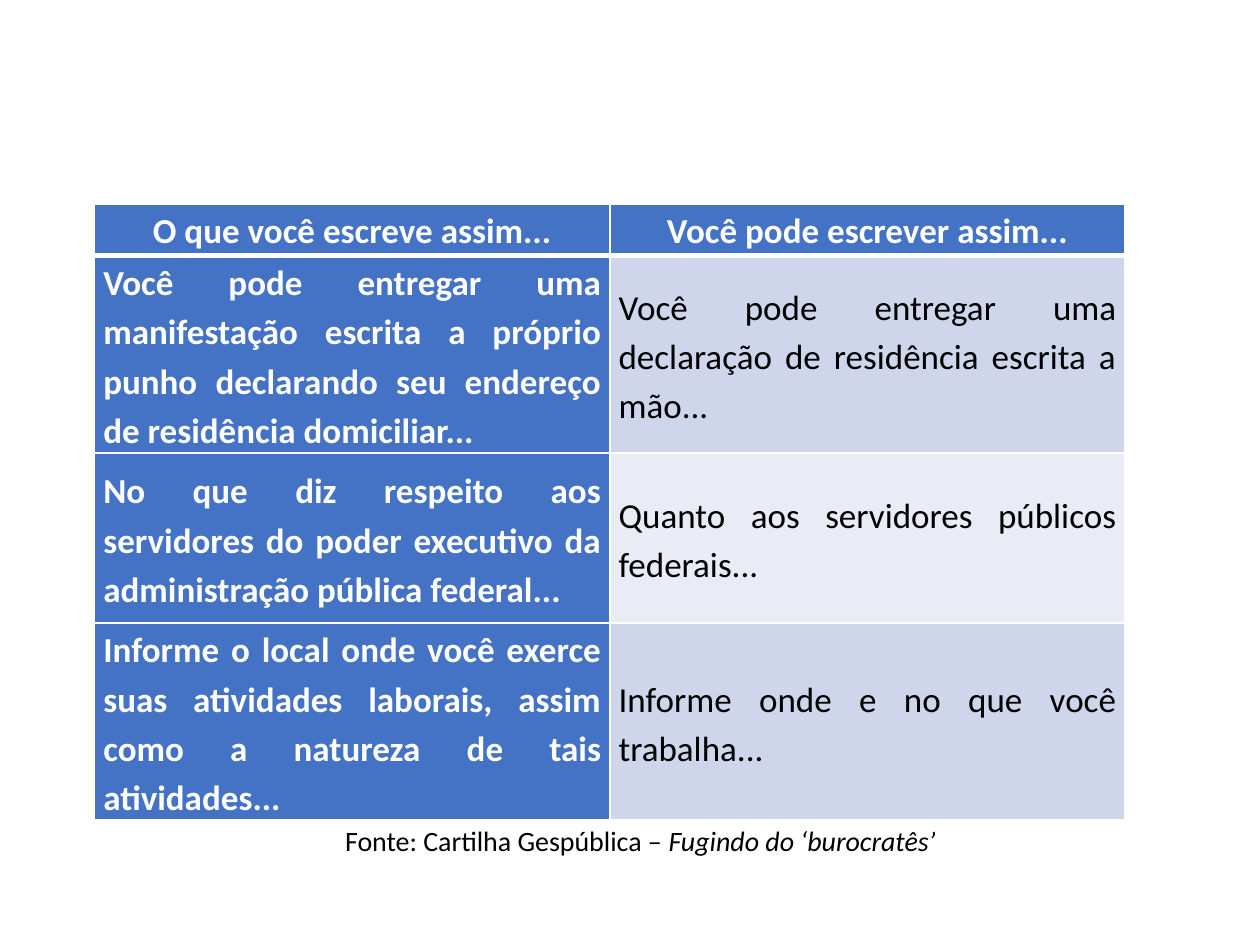
"""Build a slide that sets bureaucratic wording beside plain wording."""
from dataclasses import dataclass

from lxml import etree
from pptx import Presentation
from pptx.dml.color import RGBColor
from pptx.enum.text import MSO_ANCHOR, PP_ALIGN
from pptx.oxml.ns import qn
from pptx.util import Inches, Pt

TOP, MIDDLE = MSO_ANCHOR.TOP, MSO_ANCHOR.MIDDLE
CENTER, JUSTIFY = PP_ALIGN.CENTER, PP_ALIGN.JUSTIFY


@dataclass(frozen=True)
class Theme:
    font: str = "Calibri"
    table_size: int = 20
    source_size: int = 16
    accent: str = "4472C4"
    bands: tuple = ("CFD5EA", "E9EBF5")
    light: str = "FFFFFF"
    dark: str = "000000"
    border: int = 1
    header_border: int = 3


class SlideBuilder:
    def __init__(self, slide, theme):
        self.s = slide
        self.theme = theme

    def style(self, r, size, color, bold=False, italic=False):
        r.font.name = self.theme.font
        r.font.size = Pt(size)
        r.font.bold = bold
        r.font.italic = italic
        r.font.color.rgb = RGBColor.from_string(color)

    def border(self, cell, side, width):
        tc_pr = cell._tc.get_or_add_tcPr()
        line = etree.SubElement(tc_pr, qn(f"a:ln{side}"), w=str(Pt(width)))
        fill = etree.SubElement(line, qn("a:solidFill"))
        etree.SubElement(fill, qn("a:srgbClr"), val=self.theme.light)

    def cell(self, cell, text, row, col):
        t = self.theme
        header = row == 0
        strong = header or col == 0
        widths = {"L": t.border, "R": t.border,
                  "T": t.header_border if row == 1 else t.border,
                  "B": t.header_border if header else t.border}
        for side, width in widths.items():
            self.border(cell, side, width)
        cell.fill.solid()
        color = t.accent if strong else t.bands[(row - 1) % 2]
        cell.fill.fore_color.rgb = RGBColor.from_string(color)
        cell.margin_left = cell.margin_right = Inches(0.07)
        cell.margin_top = cell.margin_bottom = 0
        cell.vertical_anchor = TOP if header else MIDDLE
        cell.text_frame.text = text
        p = cell.text_frame.paragraphs[0]
        p.alignment = CENTER if header else JUSTIFY
        p.line_spacing = 1.15
        p.space_after = Pt(8)
        self.style(p.runs[0], t.table_size, t.light if strong else t.dark, strong)

    def table(self, rows, left, top, col_width, heights):
        cols = len(rows[0])
        table = self.s.shapes.add_table(
            len(rows), cols, Inches(left), Inches(top),
            Inches(col_width * cols), Inches(sum(heights))).table
        for column in table.columns:
            column.width = Inches(col_width)
        for i, (texts, height) in enumerate(zip(rows, heights)):
            table.rows[i].height = Inches(height)
            for j, text in enumerate(texts):
                self.cell(table.cell(i, j), text, i, j)

    def source(self, label, title, left, top, width, height):
        sp = self.s.shapes.add_textbox(
            Inches(left), Inches(top), Inches(width), Inches(height))
        tf = sp.text_frame
        tf.word_wrap = True
        tf.vertical_anchor = MIDDLE
        p = tf.paragraphs[0]
        p.alignment = JUSTIFY
        for text, italic in ((label, False), (title, True)):
            r = p.add_run()
            r.text = text
            self.style(r, self.theme.source_size, self.theme.dark, italic=italic)


ROWS = [
    ("O que você escreve assim...", "Você pode escrever assim..."),
    ("Você pode entregar uma manifestação escrita a próprio punho declarando "
     "seu endereço de residência domiciliar...",
     "Você pode entregar uma declaração de residência escrita a mão..."),
    ("No que diz respeito aos servidores do poder executivo da administração "
     "pública federal...",
     "Quanto aos servidores públicos federais..."),
    ("Informe o local onde você exerce suas atividades laborais, assim como a "
     "natureza de tais atividades...",
     "Informe onde e no que você trabalha..."),
]


def main():
    prs = Presentation()
    prs.slide_width, prs.slide_height = Inches(10), Inches(7.5)
    builder = SlideBuilder(prs.slides.add_slide(prs.slide_layouts[6]), Theme())
    builder.table(ROWS, 0.75, 1.62, 4.09, (0.41, 1.47, 1.35, 1.47))
    builder.source("Fonte: Cartilha Gespública – ", "Fugindo do ‘burocratês’",
                   2.64, 6.25, 5.51, 0.84)
    prs.save("out.pptx")


if __name__ == "__main__":
    main()
